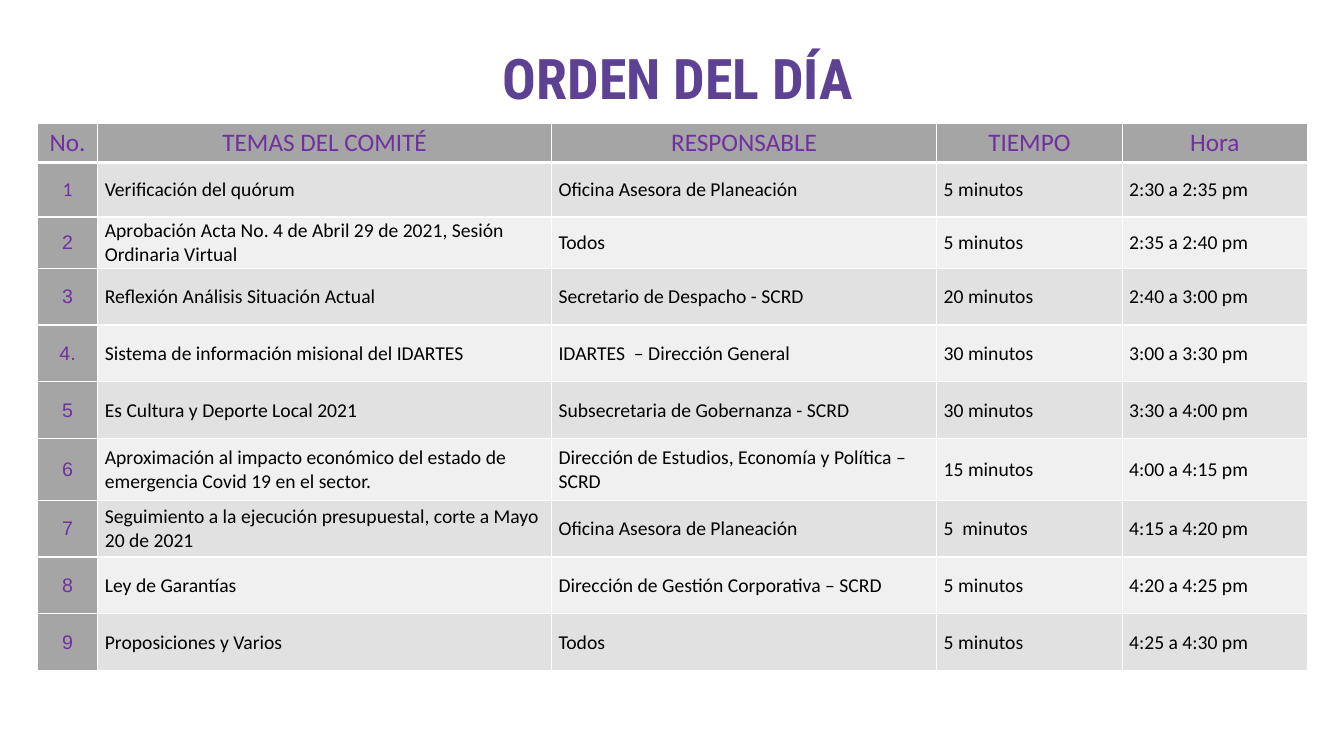
from dataclasses import dataclass

import pptx
import pptx.dml.color
import pptx.enum.text
import pptx.oxml
import pptx.oxml.ns
import pptx.util

SLIDE_WIDTH = pptx.util.Inches(13.33)
SLIDE_HEIGHT = pptx.util.Inches(7.5)

PURPLE, TITLE_PURPLE = "7030A0", "5D4294"
BLACK, WHITE = "000000", "FFFFFF"
GREY = "A5A5A5"
BANDS = ("E1E1E1", "F0F0F0")

# Percent of the slide's width and height
COLUMN_SHARES = (4.5, 33.76, 28.66, 13.8, 13.8)
HEADER_SHARE = 5.2


@dataclass
class AgendaItem:
    number: str
    topic: str
    owner: str
    duration: str
    hours: str
    height_share: float = 7.5
    number_font: str = "Arial"

    def texts(self) -> tuple[str, ...]:
        return self.number, self.topic, self.owner, self.duration, self.hours


HEADINGS = ("No.", "TEMAS DEL COMITÉ", "RESPONSABLE", "TIEMPO", "Hora")
AGENDA = (
    AgendaItem("1", "Verificación del quórum", "Oficina Asesora de Planeación",
               "5 minutos", "2:30 a 2:35 pm", 7.2, "Calibri"),
    AgendaItem("2", "Aprobación Acta No. 4 de Abril 29 de 2021, Sesión Ordinaria Virtual",
               "Todos", "5 minutos", "2:35 a 2:40 pm", 6.8),
    AgendaItem("3", "Reflexión Análisis Situación Actual", "Secretario de Despacho - SCRD",
               "20 minutos", "2:40 a 3:00 pm"),
    AgendaItem("4.", "Sistema de información misional del IDARTES",
               "IDARTES  – Dirección General", "30 minutos", "3:00 a 3:30 pm"),
    AgendaItem("5", "Es Cultura y Deporte Local 2021", "Subsecretaria de Gobernanza - SCRD",
               "30 minutos", "3:30 a 4:00 pm"),
    AgendaItem("6", "Aproximación al impacto económico del estado de emergencia Covid 19 en el sector.",
               "Dirección de Estudios, Economía y Política – SCRD",
               "15 minutos", "4:00 a 4:15 pm", 8.2),
    AgendaItem("7", "Seguimiento a la ejecución presupuestal, corte a Mayo 20 de 2021",
               "Oficina Asesora de Planeación", "5  minutos", "4:15 a 4:20 pm"),
    AgendaItem("8", "Ley de Garantías", "Dirección de Gestión Corporativa – SCRD",
               "5 minutos", "4:20 a 4:25 pm"),
    AgendaItem("9", "Proposiciones y Varios", "Todos", "5 minutos", "4:25 a 4:30 pm"),
)


def across(percent: float) -> int:
    return round(SLIDE_WIDTH * percent / 100)


def down(percent: float) -> int:
    return round(SLIDE_HEIGHT * percent / 100)


def color(value: str) -> pptx.dml.color.RGBColor:
    return pptx.dml.color.RGBColor.from_string(value)


def write(text_frame, text: str, *, size: float, font: str = "Calibri", fill: str = BLACK,
          bold: bool = False, centered: bool = False, line_spacing: float = 1.0) -> None:
    paragraph = text_frame.paragraphs[0]
    alignment = pptx.enum.text.PP_ALIGN
    paragraph.alignment = alignment.CENTER if centered else alignment.LEFT
    paragraph.line_spacing = line_spacing
    run = paragraph.add_run()
    run.text = text
    run.font.name = font
    run.font.size = pptx.util.Pt(size)
    run.font.bold = bold
    run.font.color.rgb = color(fill)


def style_cell(cell, fill: str, bottom_width: float = 1) -> None:
    cell.vertical_anchor = pptx.enum.text.MSO_ANCHOR.MIDDLE
    cell.margin_left = cell.margin_right = pptx.util.Inches(0.07)
    cell.margin_top = pptx.util.Inches(0.01)
    cell.margin_bottom = 0
    # Borders come before the fill in the cell's properties
    properties = cell._tc.get_or_add_tcPr()
    for side, width in (("L", 1), ("R", 1), ("T", 1), ("B", bottom_width)):
        properties.append(pptx.oxml.parse_xml(
            f'<a:ln{side} {pptx.oxml.ns.nsdecls("a")} w="{pptx.util.Pt(width)}">'
            f'<a:solidFill><a:srgbClr val="{WHITE}"/></a:solidFill></a:ln{side}>'))
    cell.fill.solid()
    cell.fill.fore_color.rgb = color(fill)


def add_title(slide, text: str) -> None:
    title = slide.shapes.title
    title.left, title.top = across(11.93), down(5.73)
    title.width, title.height = across(76.14), down(8.4)
    frame = title.text_frame
    frame.auto_size = pptx.enum.text.MSO_AUTO_SIZE.NONE
    frame.vertical_anchor = pptx.enum.text.MSO_ANCHOR.MIDDLE
    frame.margin_left = pptx.util.Inches(0.22)
    write(frame, text, size=40, font="Roboto Condensed", fill=TITLE_PURPLE,
          bold=True, centered=True, line_spacing=1.07)


def add_agenda(slide, agenda: tuple[AgendaItem, ...]) -> None:
    row_shares = (HEADER_SHARE, *(item.height_share for item in agenda))
    table = slide.shapes.add_table(
        len(row_shares), len(COLUMN_SHARES), across(2.78), down(16.3),
        across(sum(COLUMN_SHARES)), down(sum(row_shares))).table
    for column, share in zip(table.columns, COLUMN_SHARES):
        column.width = across(share)
    for row, share in zip(table.rows, row_shares):
        row.height = down(share)

    # Header row
    for cell, heading in zip(table.rows[0].cells, HEADINGS):
        style_cell(cell, GREY, bottom_width=3)
        write(cell.text_frame, heading, size=18, fill=PURPLE, centered=True)

    # Banded rows with a grey number column
    for index, item in enumerate(agenda):
        for column, text in enumerate(item.texts()):
            cell = table.cell(index + 1, column)
            if column == 0:
                style_cell(cell, GREY)
                write(cell.text_frame, text, size=14, font=item.number_font,
                      fill=PURPLE, centered=True)
            else:
                style_cell(cell, BANDS[index % 2])
                write(cell.text_frame, text, size=14)


def main() -> None:
    presentation = pptx.Presentation()
    presentation.slide_width = SLIDE_WIDTH
    presentation.slide_height = SLIDE_HEIGHT
    slide = presentation.slides.add_slide(presentation.slide_layouts[5])
    add_title(slide, "ORDEN DEL DÍA")
    add_agenda(slide, AGENDA)
    presentation.save("out.pptx")


if __name__ == "__main__":
    main()
